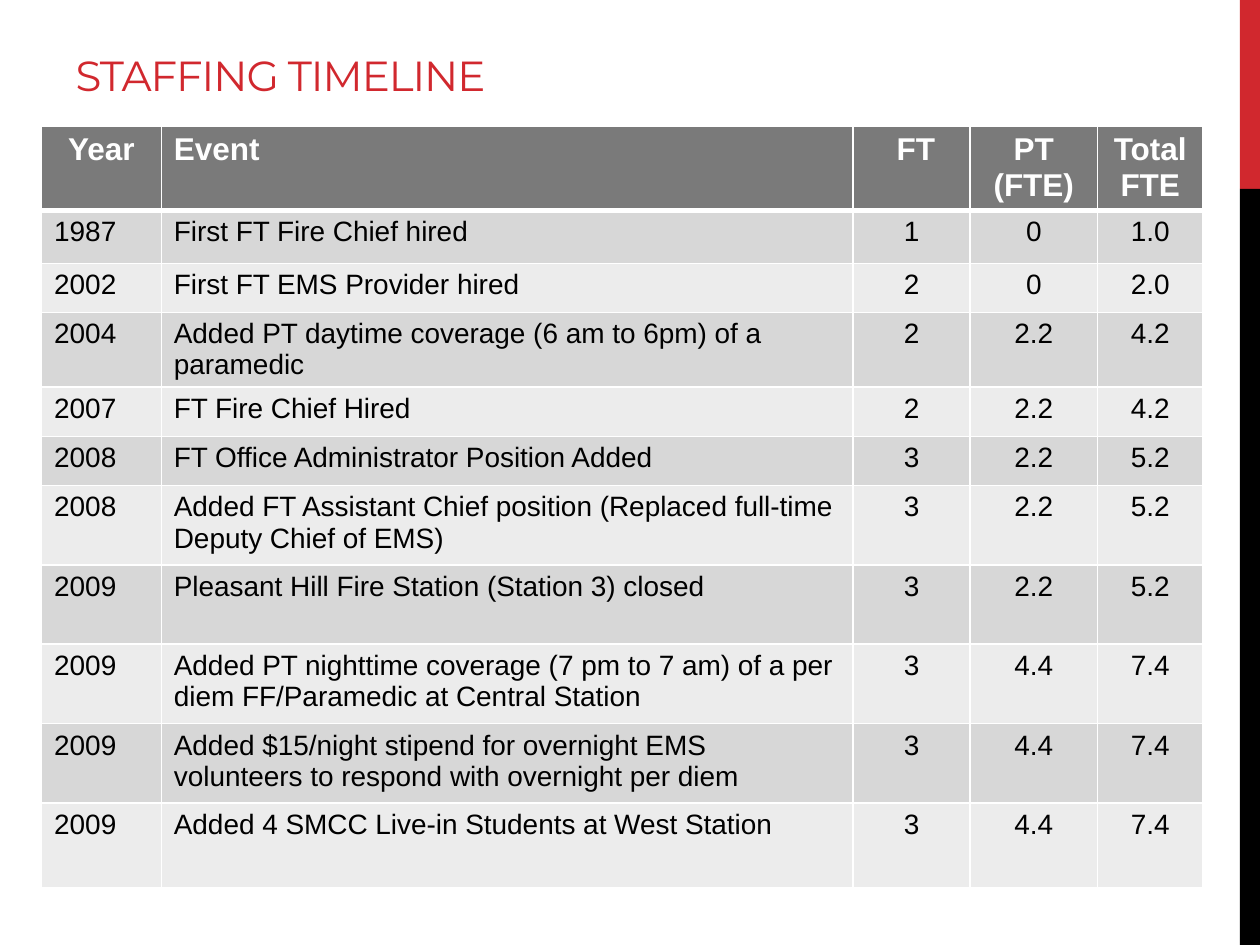
from lxml.etree import SubElement
from pptx import Presentation
from pptx.dml.color import RGBColor
from pptx.enum.shapes import MSO_SHAPE
from pptx.enum.text import MSO_ANCHOR, PP_ALIGN
from pptx.oxml.ns import qn
from pptx.util import Inches, Pt

RED = RGBColor(0xD1, 0x28, 0x2E)
BLACK = RGBColor(0, 0, 0)
WHITE = RGBColor(0xFF, 0xFF, 0xFF)
HEADER_GRAY = RGBColor(0x7A, 0x7A, 0x7A)
BAND_GRAYS = (RGBColor(0xD7, 0xD7, 0xD7), RGBColor(0xEC, 0xEC, 0xEC))

# Content
TITLE = "STAFFING TIMELINE"
HEADER = ("Year", "Event", " FT", "PT (FTE)", "Total FTE")
EVENTS = [
    ("1987", "First FT Fire Chief hired", "1", "0", "1.0"),
    ("2002", "First FT EMS Provider hired", "2", "0", "2.0"),
    ("2004", "Added PT daytime coverage (6 am to 6pm) of a paramedic", "2", "2.2", "4.2"),
    ("2007", "FT Fire Chief Hired", "2", "2.2", "4.2"),
    ("2008", "FT Office Administrator Position Added", "3", "2.2", "5.2"),
    ("2008", "Added FT Assistant Chief position (Replaced full-time Deputy Chief of EMS)",
     "3", "2.2", "5.2"),
    ("2009", "Pleasant Hill Fire Station (Station 3) closed", "3", "2.2", "5.2"),
    ("2009", "Added PT nighttime coverage (7 pm to 7 am) of a per diem FF/Paramedic "
     "at Central Station", "3", "4.4", "7.4"),
    ("2009", "Added $15/night stipend for overnight EMS volunteers to respond with "
     "overnight per diem", "3", "4.4", "7.4"),
    ("2009", "Added 4 SMCC Live-in Students at West Station", "3", "4.4", "7.4"),
]
COLUMN_WIDTHS = (0.95, 5.49, 0.93, 1.01, 0.84)
ROW_HEIGHTS = (0.67, 0.42, 0.39, 0.39, 0.39, 0.39, 0.63, 0.63, 0.63, 0.63, 0.67)
SIDE_BARS = [(0, 1.5, RED), (1.5, 6, BLACK)]  # top, height, colour


def add_run(paragraph, text, font_name, size, color, bold=False):
    run = paragraph.add_run()
    run.text = text
    run.font.name = font_name
    run.font.size = Pt(size)
    run.font.bold = bold
    run.font.color.rgb = color
    return run


def add_border(cell, side, points):
    properties = cell._tc.get_or_add_tcPr()
    line = SubElement(properties, qn(f"a:ln{side}"), w=str(Pt(points)))
    fill = SubElement(line, qn("a:solidFill"))
    SubElement(fill, qn("a:srgbClr"), val=str(WHITE))


def format_cell(cell, text, row, column):
    is_header = row == 0
    widths = {"L": 1, "R": 1, "T": 3 if row == 1 else 1, "B": 3 if is_header else 1}
    for side, points in widths.items():
        add_border(cell, side, points)
    cell.fill.solid()
    cell.fill.fore_color.rgb = HEADER_GRAY if is_header else BAND_GRAYS[(row - 1) % 2]
    paragraph = cell.text_frame.paragraphs[0]
    centered = column >= 2 or (is_header and column == 0)
    paragraph.alignment = PP_ALIGN.CENTER if centered else PP_ALIGN.LEFT
    add_run(paragraph, text, "Arial", 18 if is_header else 16,
            WHITE if is_header else BLACK, is_header)


presentation = Presentation()
presentation.slide_width = Inches(10)
presentation.slide_height = Inches(7.5)
slide = presentation.slides.add_slide(presentation.slide_layouts[5])

# Side bars
for top, height, color in SIDE_BARS:
    bar = slide.shapes.add_shape(MSO_SHAPE.RECTANGLE, Inches(9.84), Inches(top),
                                 Inches(0.16), Inches(height))
    bar.shadow.inherit = False
    bar.fill.solid()
    bar.fill.fore_color.rgb = color
    bar.line.fill.background()

# Title
title = slide.shapes.title
title.left, title.top = Inches(0.5), Inches(0.17)
title.width, title.height = Inches(6.33), Inches(0.67)
title.text_frame.vertical_anchor = MSO_ANCHOR.BOTTOM
title_paragraph = title.text_frame.paragraphs[0]
title_paragraph.alignment = PP_ALIGN.LEFT
title_run = add_run(title_paragraph, TITLE, "Montserrat", 24, RED)
title_run.font._element.set("spc", "-60")

# Staffing table
rows = [HEADER, *EVENTS]
table = slide.shapes.add_table(
    len(rows), len(HEADER), Inches(0.33), Inches(1),
    Inches(sum(COLUMN_WIDTHS)), Inches(sum(ROW_HEIGHTS))).table
for table_column, width in zip(table.columns, COLUMN_WIDTHS):
    table_column.width = Inches(width)
for row, (values, height) in enumerate(zip(rows, ROW_HEIGHTS)):
    table.rows[row].height = Inches(height)
    for column, text in enumerate(values):
        format_cell(table.cell(row, column), text, row, column)

presentation.save("out.pptx")
